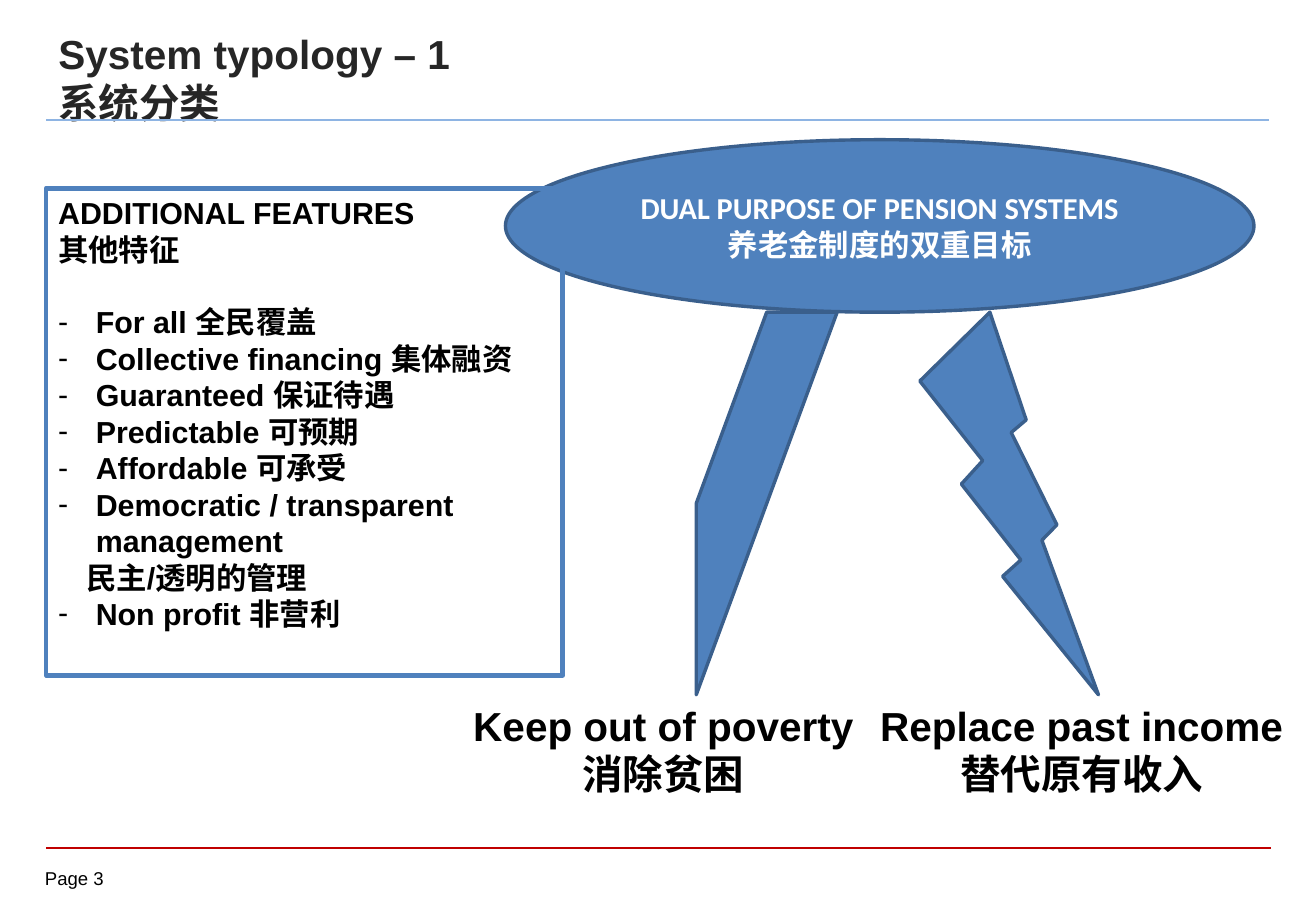
from lxml.etree import SubElement
from pptx import Presentation
from pptx.dml.color import RGBColor
from pptx.enum.shapes import MSO_CONNECTOR, MSO_SHAPE
from pptx.enum.text import MSO_ANCHOR, MSO_AUTO_SIZE, PP_ALIGN
from pptx.oxml.ns import qn
from pptx.util import Inches, Pt

BLUE, EDGE, BLACK = "4F81BD", "3A5F8C", "000000"
FEATURES = [
    "For all 全民覆盖",
    "Collective financing 集体融资",
    "Guaranteed 保证待遇",
    "Predictable 可预期",
    "Affordable 可承受",
    "Democratic / transparent management",
    "民主/透明的管理",
    "Non profit 非营利",
]
UNMARKED = "民主/透明的管理"


def rgb(code):
    return RGBColor.from_string(code)


def write(frame, lines, size, color=BLACK, name="Arial", bold=True,
          align=PP_ALIGN.LEFT, anchor=MSO_ANCHOR.TOP):
    """Fill a text frame with one paragraph per line and return the paragraphs."""
    settings = {"word_wrap": True, "auto_size": MSO_AUTO_SIZE.NONE,
                "vertical_anchor": anchor}
    for key, value in settings.items():
        setattr(frame, key, value)
    frame.text = "\n".join(lines)
    for para in frame.paragraphs:
        para.alignment = align
        font = para.runs[0].font
        for key, value in {"name": name, "size": Pt(size), "bold": bold}.items():
            setattr(font, key, value)
        font.color.rgb = rgb(color)
    return frame.paragraphs


def indent(para, left, mark=None):
    props = para._p.get_or_add_pPr()
    props.set("marL", str(Inches(left)))
    props.set("indent", str(Inches(-left if mark else 0)))
    if mark:
        SubElement(props, qn("a:buFont")).set("typeface", "Arial")
        SubElement(props, qn("a:buChar")).set("char", mark)


def add_rule(slide, left, top, width, color, weight):
    rule = slide.shapes.add_connector(
        MSO_CONNECTOR.STRAIGHT, Inches(left), Inches(top),
        Inches(left + width), Inches(top))
    rule.line.color.rgb = rgb(color)
    rule.line.width = Pt(weight)
    SubElement(rule._element.spPr, qn("a:effectLst"))


def add_form(slide, kind, box, fill=BLUE, line=EDGE, weight=2):
    form = slide.shapes.add_shape(kind, *map(Inches, box))
    form.shadow.inherit = False
    if fill:
        form.fill.solid()
        form.fill.fore_color.rgb = rgb(fill)
    else:
        form.fill.background()
    form.line.color.rgb = rgb(line)
    form.line.width = Pt(weight)
    return form


def add_header(slide, left, top, width, height):
    title = slide.shapes.title
    box = dict(left=left, top=top, width=width, height=height)
    for key, value in box.items():
        setattr(title, key, Inches(value))
    write(title.text_frame, ["System typology – 1", "系统分类"], 24, "262626")
    add_rule(slide, left, top + 0.8, 10.06, "8EB4E3", 1.5)


def add_footer(slide, left, top, width):
    add_rule(slide, left, top, width, "C00000", 1)
    page = slide.shapes.add_textbox(
        Inches(left - 0.01), Inches(top + 0.16), Inches(0.73), Inches(0.22))
    frame = page.text_frame
    for side in ("left", "top", "right", "bottom"):
        setattr(frame, f"margin_{side}", 0)
    write(frame, ["Page 3"], 11, bold=False)


def add_purpose(slide, left, top, width, height):
    oval = add_form(slide, MSO_SHAPE.OVAL, (left, top, width, height))
    write(oval.text_frame,
          ["DUAL PURPOSE OF PENSION SYSTEMS", "养老金制度的双重目标"],
          18, "FFFFFF", "Calibri", align=PP_ALIGN.CENTER,
          anchor=MSO_ANCHOR.MIDDLE)


def add_goal(slide, kind, box, lines, label_left, label_width):
    """Draw one leg under the oval, with its label at the foot."""
    add_form(slide, kind, box)
    label = slide.shapes.add_textbox(
        Inches(label_left), Inches(box[1] + box[3]),
        Inches(label_width), Inches(0.91))
    write(label.text_frame, lines, 24, align=PP_ALIGN.CENTER)


def add_features(slide, left, top, width, height):
    panel = add_form(slide, MSO_SHAPE.RECTANGLE, (left, top, width, height),
                     fill=None, line=BLUE, weight=2.75)
    heading = ["ADDITIONAL FEATURES", "其他特征"]
    paras = write(panel.text_frame, heading + FEATURES, 18)
    items = paras[len(heading):]
    items[0].space_before = Pt(21.6)
    for para in items:
        if para.text == UNMARKED:
            indent(para, 0.23)
        else:
            indent(para, 0.31, "-")


def main():
    deck = Presentation()
    deck.slide_width, deck.slide_height = Inches(10.83), Inches(7.5)
    slide = deck.slides.add_slide(deck.slide_layouts[5])
    add_footer(slide, 0.38, 6.98, 10.08)
    add_header(slide, 0.38, 0.19, 7.56, 0.71)
    add_purpose(slide, 4.16, 1.15, 6.16, 1.42)
    add_goal(slide, MSO_SHAPE.DIAGONAL_STRIPE, (5.73, 2.57, 1.16, 3.15),
             ["Keep out of poverty", "消除贫困"], 3.68, 3.56)
    add_goal(slide, MSO_SHAPE.LIGHTNING_BOLT, (7.57, 2.57, 1.47, 3.15),
             ["Replace past income", "替代原有收入"], 7.09, 3.62)
    add_features(slide, 0.38, 1.55, 4.25, 4.01)
    deck.save("out.pptx")


if __name__ == "__main__":
    main()
